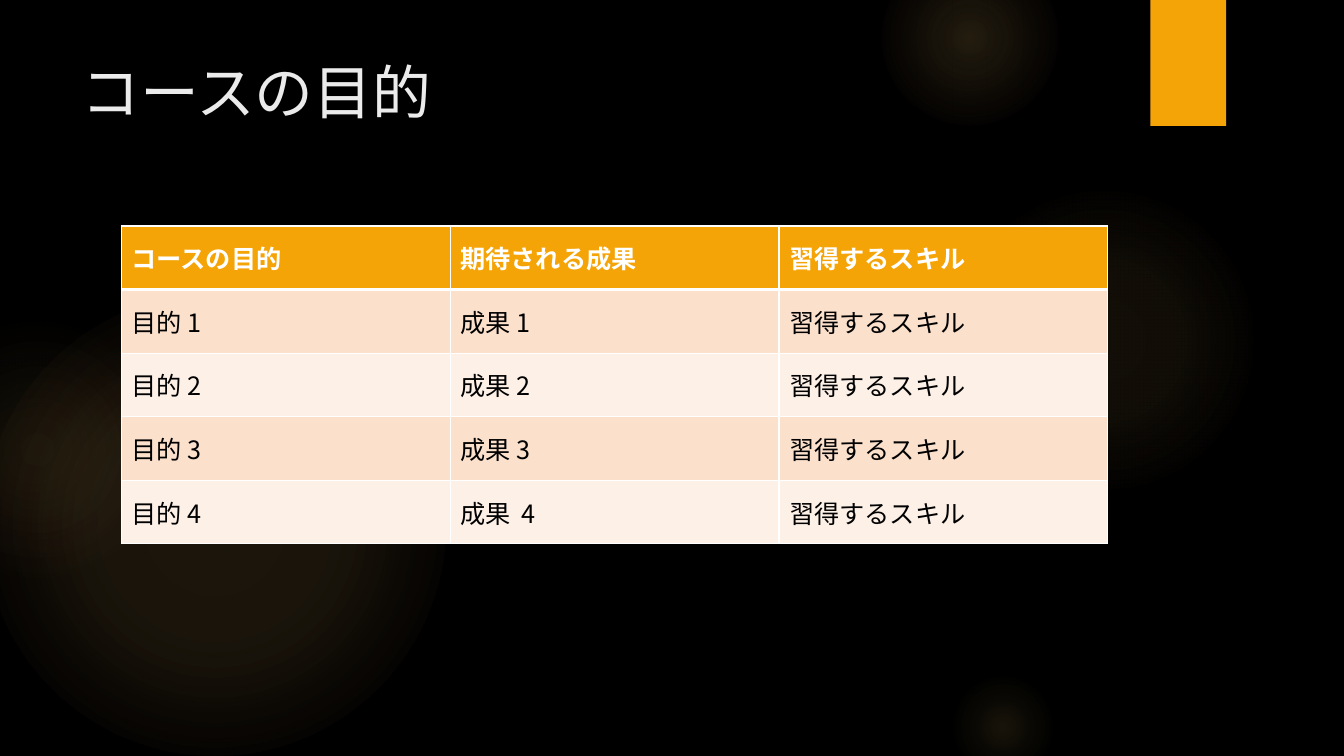
from dataclasses import dataclass

from lxml import etree
from pptx import Presentation
from pptx.dml.color import RGBColor
from pptx.enum import shapes, text
from pptx.oxml import ns, parse_xml
from pptx.util import Pt

FONT = "Noto Sans CJK JP"
BLACK = RGBColor(0x00, 0x00, 0x00)
WHITE = RGBColor(0xFF, 0xFF, 0xFF)
TITLE_GREY = RGBColor(0xEB, 0xEB, 0xEB)
ORANGE = RGBColor(0xF5, 0xA4, 0x08)
PEACH = RGBColor(0xFB, 0xE0, 0xCC)
CREAM = RGBColor(0xFD, 0xF0, 0xE7)
AMBER = RGBColor(0xFA, 0xC9, 0x6A)
CORAL = RGBColor(0xF5, 0x9B, 0x74)


@dataclass(frozen=True)
class Glow:
    left: float
    top: float
    diameter: float
    core: int
    middle: int
    middle_at: int
    edge_at: int
    edge: RGBColor = AMBER


GLOWS = [
    Glow(-12, 210, 330, 11, 10, 36, 75),
    Glow(-66, 228, 186, 8, 5, 36, 71, CORAL),
    Glow(677.5, 132, 222, 7, 6, 36, 69),
    Glow(630, -36, 126, 14, 7, 36, 73),
    Glow(677.5, 480, 78, 10, 5, 31, 66),
]
SKILL = "習得するスキル"
GOALS = [
    ("コースの目的", "期待される成果", SKILL),
    ("目的 1", "成果 1", SKILL),
    ("目的 2", "成果 2", SKILL),
    ("目的 3", "成果 3", SKILL),
    ("目的 4", "成果  4", SKILL),
]
COLUMN_WIDTH, ROW_HEIGHT = 234.8, 45.4


def add_plain_shape(slide, kind, left: float, top: float, width: float, height: float):
    shape = slide.shapes.add_shape(kind, Pt(left), Pt(top), Pt(width), Pt(height))
    shape.shadow.inherit = False
    shape.line.fill.background()
    return shape


def add_glow(slide, glow: Glow) -> None:
    circle = add_plain_shape(slide, shapes.MSO_SHAPE.OVAL,
                             glow.left, glow.top, glow.diameter, glow.diameter)
    circle.fill.background()
    stops = [(0, AMBER, glow.core), (glow.middle_at, AMBER, glow.middle),
             (glow.edge_at, glow.edge, 0)]
    stop_xml = "".join(
        f'<a:gs pos="{at * 1000}"><a:srgbClr val="{color}">'
        f'<a:alpha val="{opacity * 1000}"/></a:srgbClr></a:gs>'
        for at, color, opacity in stops)
    gradient = parse_xml(
        f'<a:gradFill {ns.nsdecls("a")} rotWithShape="1"><a:gsLst>{stop_xml}</a:gsLst>'
        '<a:path path="circle"><a:fillToRect l="50000" t="50000" r="50000" b="50000"/>'
        '</a:path></a:gradFill>')
    properties = circle.element.spPr
    properties.replace(properties.find(ns.qn("a:noFill")), gradient)


def format_text(frame, size: float, color: RGBColor, bold: bool = False) -> None:
    for paragraph in frame.paragraphs:
        paragraph.alignment = text.PP_ALIGN.LEFT
        for run in paragraph.runs:
            run.font.size, run.font.bold, run.font.name = Pt(size), bold, FONT
            run.font.color.rgb = color
            east_asian = etree.SubElement(run.font._element, ns.qn("a:ea"))
            east_asian.set("typeface", FONT)


def set_borders(cell, top: float, bottom: float) -> None:
    properties = cell._tc.get_or_add_tcPr()
    for index, (side, width) in enumerate(
            [("L", 1), ("R", 1), ("T", top), ("B", bottom)]):
        properties.insert(index, parse_xml(
            f'<a:ln{side} {ns.nsdecls("a")} w="{Pt(width)}"><a:solidFill>'
            f'<a:srgbClr val="{WHITE}"/></a:solidFill></a:ln{side}>'))


def add_title(slide) -> None:
    title = slide.shapes.title
    title.left, title.top, title.width, title.height = Pt(51), Pt(36), Pt(741), Pt(110)
    frame = title.text_frame
    frame.text = "コースの目的"
    frame.word_wrap = True
    frame.auto_size = text.MSO_AUTO_SIZE.NONE
    frame.vertical_anchor = text.MSO_ANCHOR.TOP
    format_text(frame, 42, TITLE_GREY)
    slide.shapes.element.append(title.element)


def add_goals_table(slide) -> None:
    goals = slide.shapes.add_table(
        len(GOALS), len(GOALS[0]), Pt(86.8), Pt(161.5),
        Pt(COLUMN_WIDTH * len(GOALS[0])), Pt(ROW_HEIGHT * len(GOALS))).table
    for column in goals.columns:
        column.width = Pt(COLUMN_WIDTH)
    for r, entries in enumerate(GOALS):
        goals.rows[r].height = Pt(ROW_HEIGHT)
        header = r == 0
        for c, entry in enumerate(entries):
            cell = goals.cell(r, c)
            cell.text_frame.text = entry
            cell.vertical_anchor = text.MSO_ANCHOR.MIDDLE
            cell.fill.solid()
            cell.fill.fore_color.rgb = ORANGE if header else PEACH if r % 2 else CREAM
            format_text(cell.text_frame, 18, WHITE if header else BLACK, header)
            set_borders(cell, top=3 if r == 1 else 1, bottom=3 if header else 1)


def main() -> None:
    deck = Presentation()
    deck.slide_width, deck.slide_height = Pt(960), Pt(540)
    slide = deck.slides.add_slide(deck.slide_layouts[5])
    slide.background.fill.solid()
    slide.background.fill.fore_color.rgb = BLACK
    for glow in GLOWS:
        add_glow(slide, glow)
    tab = add_plain_shape(slide, shapes.MSO_SHAPE.RECTANGLE, 821.8, 0, 54, 90)
    tab.fill.solid()
    tab.fill.fore_color.rgb = ORANGE
    add_title(slide)
    add_goals_table(slide)
    deck.save("out.pptx")


if __name__ == "__main__":
    main()
